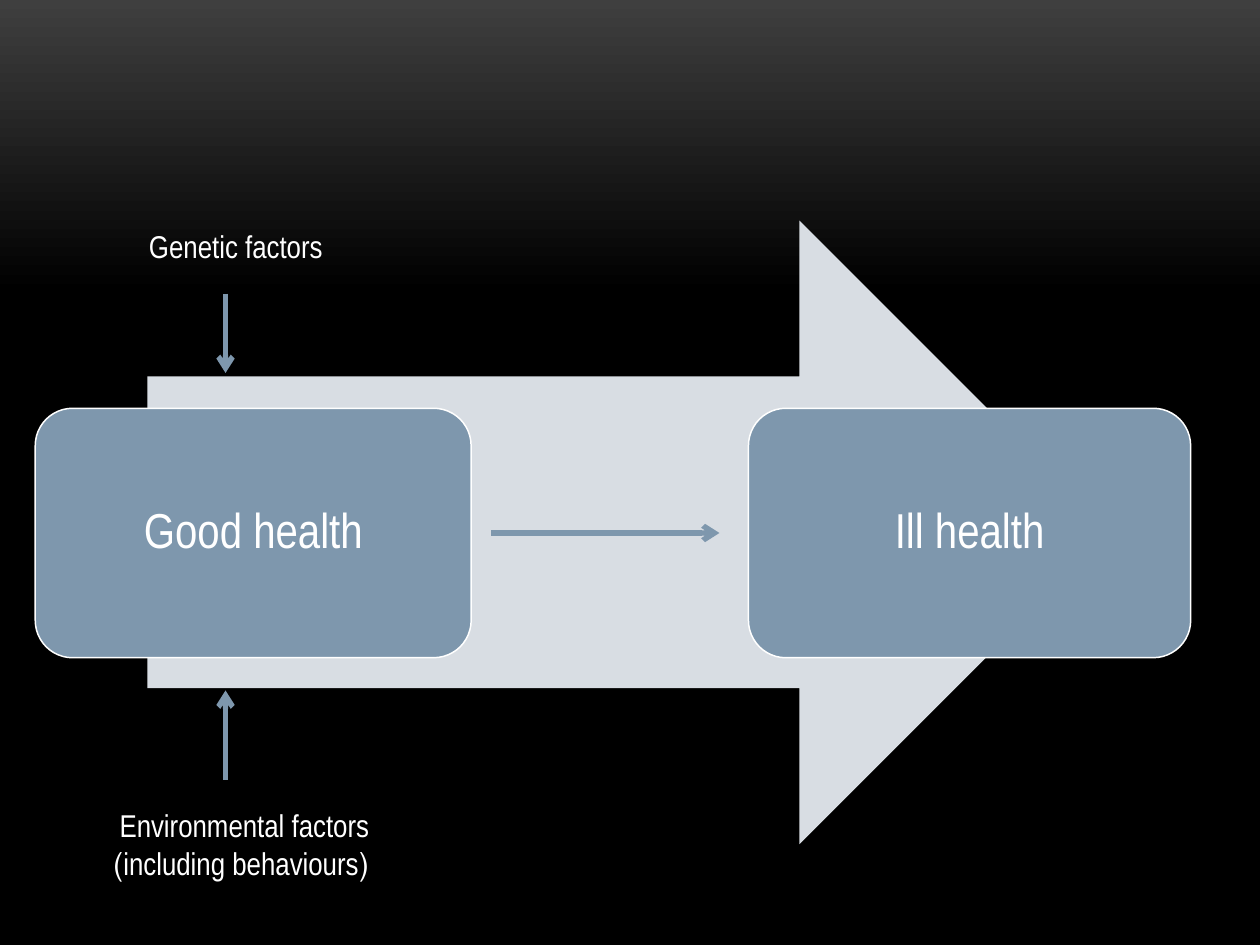
"""Build a slide showing the factors that lead from good health to ill health."""
from dataclasses import dataclass

from lxml import etree
from pptx import Presentation
from pptx.dml.color import RGBColor
from pptx.enum.shapes import MSO_CONNECTOR, MSO_SHAPE
from pptx.enum.text import MSO_ANCHOR, MSO_AUTO_SIZE, PP_ALIGN
from pptx.oxml.ns import qn
from pptx.util import Inches, Pt

STRAIGHT = MSO_CONNECTOR.STRAIGHT
RIGHT_ARROW = MSO_SHAPE.RIGHT_ARROW
ROUNDED = MSO_SHAPE.ROUNDED_RECTANGLE
MIDDLE = MSO_ANCHOR.MIDDLE
GROW = MSO_AUTO_SIZE.SHAPE_TO_FIT_TEXT
CENTER, RIGHT = PP_ALIGN.CENTER, PP_ALIGN.RIGHT

FONT = "Arial Narrow"
COLORS = {
    "glow": "3F3F3F",
    "night": "000000",
    "pale": "D8DDE3",
    "steel": "7E97AD",
    "white": "FFFFFF",
}
STATE_TOP, STATE_HEIGHT = 3.24, 1.98
FLOW_Y = STATE_TOP + STATE_HEIGHT / 2
FACTOR_X = 1.79


@dataclass
class State:
    label: str
    left: float
    width: float


@dataclass
class Factor:
    lines: list[str]
    left: float
    top: float
    width: float
    height: float
    wraps: bool


@dataclass
class Arrow:
    x1: float
    y1: float
    x2: float
    y2: float


STATES = [State("Good health", 0.28, 3.46), State("Ill health", 5.94, 3.51)]
FACTORS = [
    Factor(["Genetic factors"], 0.91, 1.75, 1.75, 0.4, False),
    Factor(["Environmental factors", "(including behaviours)"],
           0.07, 6.35, 2.96, 0.71, True),
]
ARROWS = [
    Arrow(3.9, FLOW_Y, 5.71, FLOW_Y),
    Arrow(FACTOR_X, 2.33, FACTOR_X, 2.96),
    Arrow(FACTOR_X, 6.19, FACTOR_X, 5.48),
]


def rgb(name: str) -> RGBColor:
    return RGBColor.from_string(COLORS[name])


def paint_background(slide) -> None:
    fill = slide.background.fill
    fill.gradient()
    fill.gradient_angle = 270
    for stop, position, name in zip(fill.gradient_stops, (0, 0.31), ("glow", "night")):
        stop.position = position
        stop.color.rgb = rgb(name)


def write_lines(frame, lines: list[str], size: int, align: PP_ALIGN,
                wraps: bool = True) -> None:
    frame.word_wrap = wraps
    frame.text = "\n".join(lines)
    for paragraph in frame.paragraphs:
        paragraph.alignment = align
        paragraph._p.get_or_add_pPr().set("rtl", "1")
        paragraph.font.name = FONT
        paragraph.font.size = Pt(size)
        paragraph.font.color.rgb = rgb("white")


def add_filled(slide, preset, left: float, top: float, width: float,
               height: float, color: str):
    shape = slide.shapes.add_shape(
        preset, Inches(left), Inches(top), Inches(width), Inches(height))
    shape.shadow.inherit = False
    shape.fill.solid()
    shape.fill.fore_color.rgb = rgb(color)
    shape.line.fill.background()
    return shape


def add_state(slide, state: State) -> None:
    card = add_filled(slide, ROUNDED, state.left, STATE_TOP, state.width,
                      STATE_HEIGHT, "steel")
    card.adjustments[0] = 0.15
    card.line.color.rgb = rgb("white")
    card.line.width = Pt(0.85)
    frame = card.text_frame
    frame.vertical_anchor = MIDDLE
    write_lines(frame, [state.label], 28, CENTER)
    frame.paragraphs[0].line_spacing = 0.9


def add_factor(slide, factor: Factor) -> None:
    caption = slide.shapes.add_textbox(
        Inches(factor.left), Inches(factor.top),
        Inches(factor.width), Inches(factor.height))
    caption.text_frame.auto_size = GROW
    write_lines(caption.text_frame, factor.lines, 18, RIGHT, factor.wraps)


def add_arrow(slide, arrow: Arrow) -> None:
    connector = slide.shapes.add_connector(
        STRAIGHT, Inches(arrow.x1), Inches(arrow.y1),
        Inches(arrow.x2), Inches(arrow.y2))
    connector.line.color.rgb = rgb("steel")
    connector.line.width = Pt(3)
    etree.SubElement(connector.line._get_or_add_ln(), qn("a:tailEnd"), type="arrow")
    etree.SubElement(connector._element.spPr, qn("a:effectLst"))


def main() -> None:
    presentation = Presentation()
    presentation.slide_width = Inches(10)
    presentation.slide_height = Inches(7.5)
    slide = presentation.slides.add_slide(presentation.slide_layouts[6])
    paint_background(slide)
    add_filled(slide, RIGHT_ARROW, 1.17, 1.75, 7.65, 4.95, "pale")
    for state in STATES:
        add_state(slide, state)
    for factor in FACTORS:
        add_factor(slide, factor)
    for arrow in ARROWS:
        add_arrow(slide, arrow)
    presentation.save("out.pptx")


if __name__ == "__main__":
    main()
